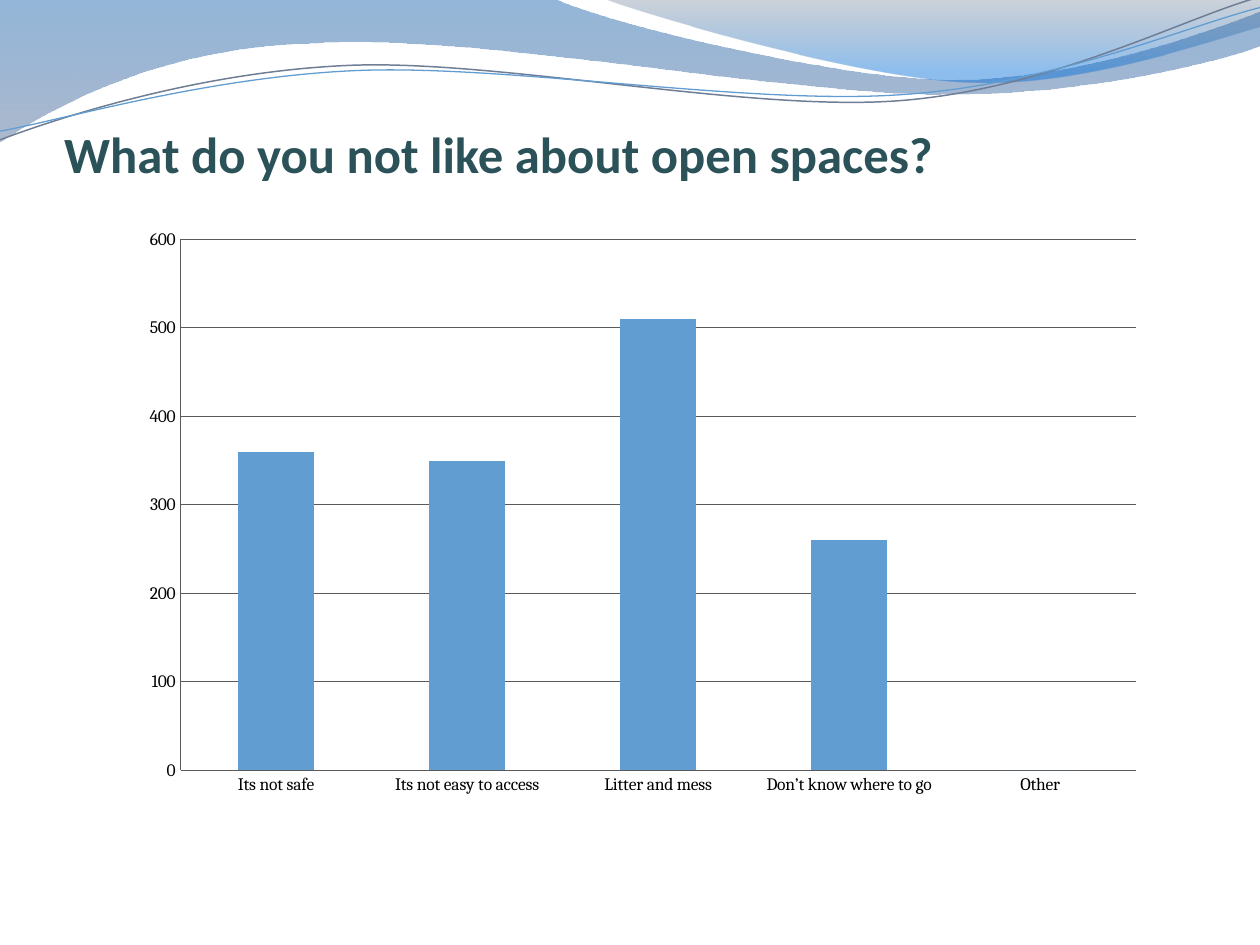
from lxml.etree import SubElement
from pptx import Presentation
from pptx.chart.data import CategoryChartData
from pptx.dml.color import RGBColor
from pptx.enum.chart import XL_CHART_TYPE, XL_TICK_MARK
from pptx.enum.text import MSO_ANCHOR, MSO_AUTO_SIZE, PP_ALIGN
from pptx.oxml import parse_xml
from pptx.oxml.ns import nsdecls, qn
from pptx.util import Pt

BLUE = "629DD1"
AXIS_GREY = "595959"

BROAD_WAVE = [
    (0, 0), (316.8, -0.7),
    (342.7, 12.2, 478.1, 45.4, 545.8, 45.4),
    (614.2, 45.4, 689.8, 18.7, 720, 6.5),
    (720.7, 25.9),
    (707.8, 31.7, 626.4, 54.7, 537.1, 54),
    (447.8, 54, 275, 20.2, 185, 24.5),
    (92.9, 25.9, 33.1, 59.8, -0.7, 81.4),
]
RIGHT_WAVE = [
    (344.9, -0.7),
    (366.5, 7.9, 491, 44.6, 553.7, 46.8),
    (616.3, 49.7, 691.9, 23, 720, 15.1),
    (720, 0),
]
GREY_STRAND = [
    (0, 79.9),
    (34.6, 67, 113.8, 41, 199.4, 37.4),
    (284.4, 33.8, 427, 64.1, 513.4, 57.6),
    (599.8, 51.1, 675.4, 10.8, 718.6, -1.4),
]
BLUE_STRAND = [
    (0, 74.9),
    (33.8, 69.1, 118.1, 43.9, 203.8, 40.3),
    (290.2, 36.7, 429.8, 60.5, 516.2, 54),
    (601.9, 48.2, 677.5, 15.1, 720, 4.3),
]
DISLIKES = {
    "Its not safe": 360,
    "Its not easy to access": 350,
    "Litter and mess": 510,
    "Don’t know where to go": 260,
    "Other": 0,
}


def rgb(color):
    return RGBColor.from_string(color)


class SlideWriter:
    title_font = "Calibri"
    chart_font = "Cambria"
    title_color = "2B5259"

    def __init__(self, slide):
        self.slide = slide

    def curved_path(self, segments, close):
        start, *rest = segments
        builder = self.slide.shapes.build_freeform(Pt(start[0]), Pt(start[1]), scale=1)
        vertices = [(Pt(x), Pt(y)) for segment in rest
                    for x, y in zip(segment[::2], segment[1::2])]
        builder.add_line_segments(vertices, close=close)
        curve = builder.convert_to_shape()
        curve.shadow.inherit = False
        steps = iter(list(curve._element.iter(qn("a:lnTo"))))
        for segment in rest:
            step = next(steps)
            if len(segment) == 6:
                bezier = step.makeelement(qn("a:cubicBezTo"))
                step.addprevious(bezier)
                for corner in (step, next(steps), next(steps)):
                    bezier.append(corner[0])
                    corner.getparent().remove(corner)
        return curve

    def wave(self, segments, stops):
        wave = self.curved_path(segments, True)
        wave.line.fill.background()
        wave.fill.gradient()
        wave.fill.gradient_angle = 270
        colors = wave._element.spPr.find(qn("a:gradFill")).findall(f".//{qn('a:gs')}")
        for stop, node, (position, color, opacity) in zip(
                wave.fill.gradient_stops, colors, stops):
            stop.position = position
            stop.color.rgb = rgb(color)
            SubElement(node[0], qn("a:alpha")).set("val", str(opacity * 1000))

    def strand(self, segments, color, width):
        strand = self.curved_path(segments, False)
        strand.fill.background()
        strand.line.color.rgb = rgb(color)
        strand.line.width = Pt(width)

    def title(self, wording, left, top, width, height):
        title = self.slide.shapes.title
        title.left, title.top = Pt(left), Pt(top)
        title.width, title.height = Pt(width), Pt(height)
        frame = title.text_frame
        frame.text = wording
        frame.word_wrap = True
        frame.auto_size = MSO_AUTO_SIZE.NONE
        frame.vertical_anchor = MSO_ANCHOR.BOTTOM
        frame.margin_left = frame.margin_right = frame.margin_bottom = 0
        frame.margin_top = Pt(3.6)
        heading = frame.paragraphs[0]
        heading.alignment = PP_ALIGN.LEFT
        heading.font.name = self.title_font
        heading.font.size = Pt(29)
        heading.font.bold = True
        heading.font.color.rgb = rgb(self.title_color)

    def column_chart(self, counts, left, top, width, height, plot_area):
        answers = CategoryChartData()
        answers.categories = list(counts)
        answers.add_series("Series 1", list(counts.values()))
        chart = self.slide.shapes.add_chart(
            XL_CHART_TYPE.COLUMN_CLUSTERED,
            Pt(left), Pt(top), Pt(width), Pt(height), answers).chart
        chart.has_legend = False
        chart.has_title = False
        chart.font.name = self.chart_font
        chart.font.size = Pt(10)
        chart.font.color.rgb = rgb("000000")

        columns = chart.plots[0]
        columns.gap_width = 150
        columns.vary_by_categories = False
        columns.series[0].format.fill.solid()
        columns.series[0].format.fill.fore_color.rgb = rgb(BLUE)

        counts_axis = chart.value_axis
        counts_axis.minimum_scale = 0
        counts_axis.maximum_scale = 600
        counts_axis.major_unit = 100
        counts_axis.has_major_gridlines = True
        for axis in (chart.category_axis, counts_axis):
            axis.major_tick_mark = XL_TICK_MARK.NONE
            axis.minor_tick_mark = XL_TICK_MARK.NONE
        for part in (chart.category_axis, counts_axis, counts_axis.major_gridlines):
            part.format.line.color.rgb = rgb(AXIS_GREY)
            part.format.line.width = Pt(0.5)
        self.place_plot(chart, plot_area)

    def place_plot(self, chart, plot_area):
        settings = [("layoutTarget", "inner"), ("xMode", "edge"), ("yMode", "edge")]
        settings += zip("xywh", plot_area)
        nodes = "".join(f'<c:{tag} val="{value}"/>' for tag, value in settings)
        layout = parse_xml(f'<c:layout {nsdecls("c")}><c:manualLayout>{nodes}'
                           "</c:manualLayout></c:layout>")
        plot = chart._chartSpace.chart.plotArea
        for default in plot.findall(qn("c:layout")):
            plot.remove(default)
        plot.insert(0, layout)


def main():
    deck = Presentation()
    deck.slide_width, deck.slide_height = Pt(720), Pt(540)
    writer = SlideWriter(deck.slides.add_slide(deck.slide_layouts[5]))
    writer.wave(BROAD_WAVE, [(0, "125EAA", 45), (1, "697FA4", 55)])
    writer.wave(RIGHT_WAVE, [(0, "596982", 30), (0.8, "0670DA", 45)])
    writer.strand(GREY_STRAND, "707E95", 0.85)
    writer.strand(BLUE_STRAND, BLUE, 0.75)
    plot_width, plot_height = 545.8, 303.4
    chart_width, chart_height = 617.8, 391
    plot_area = (55 / chart_width, 20.2 / chart_height,
                 plot_width / chart_width, plot_height / chart_height)
    writer.column_chart(DISLIKES, 48.2, 116.6, chart_width, chart_height, plot_area)
    writer.title("What do you not like about open spaces?", 36.7, 15.1, 653.8, 90)
    deck.save("out.pptx")


if __name__ == "__main__":
    main()
